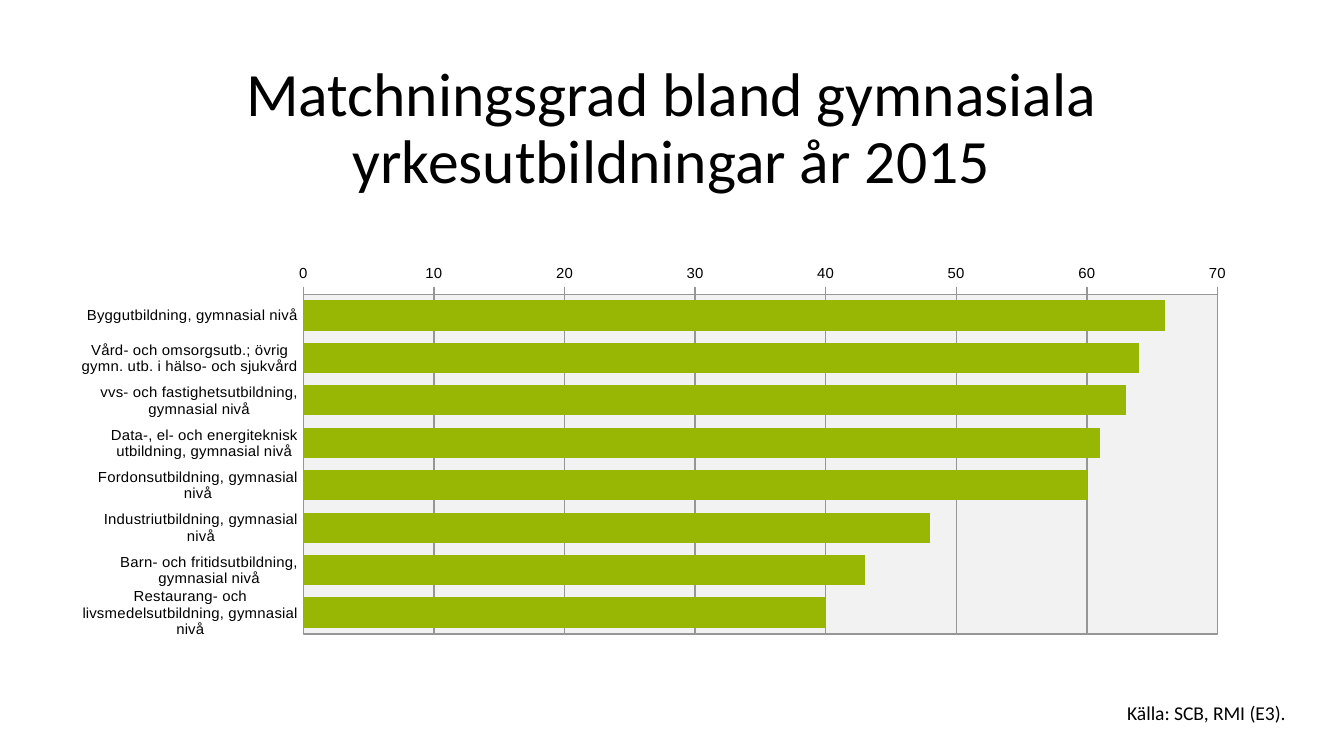
"""Build the slide on matching rates among upper secondary vocational programmes."""
from lxml.etree import SubElement
from pptx import Presentation
from pptx.chart.data import CategoryChartData
from pptx.dml.color import RGBColor
from pptx.enum.chart import XL_AXIS_CROSSES, XL_CHART_TYPE, XL_TICK_MARK
from pptx.enum.text import MSO_ANCHOR, MSO_AUTO_SIZE, PP_ALIGN
from pptx.oxml.ns import qn
from pptx.util import Pt

BLACK = RGBColor(0x00, 0x00, 0x00)
GREEN = RGBColor(0x98, 0xB6, 0x04)
GRAY = RGBColor(0x96, 0x96, 0x96)
PALE = RGBColor(0xF2, 0xF2, 0xF2)
PX_PER_INCH = 134.4


def px(*lengths):
    return [round(length * 914400 / PX_PER_INCH) for length in lengths]


def style_font(font, name, size):
    font.name = name
    font.size = Pt(size)
    font.color.rgb = BLACK


MATCHING = {
    "Byggutbildning, gymnasial nivå": 66,
    "Vård- och omsorgsutb.; övrig gymn. utb. i hälso- och sjukvård": 64,
    "vvs- och fastighetsutbildning, gymnasial nivå": 63,
    "Data-, el- och energiteknisk utbildning, gymnasial nivå": 61,
    "Fordonsutbildning, gymnasial nivå": 60,
    "Industriutbildning, gymnasial nivå": 48,
    "Barn- och fritidsutbildning, gymnasial nivå": 43,
    "Restaurang- och livsmedelsutbildning, gymnasial nivå": 40,
}

deck = Presentation()
deck.slide_width, deck.slide_height = px(1344, 756)
slide = deck.slides.add_slide(deck.slide_layouts[5])

heading = slide.shapes.title
heading.left, heading.top, heading.width, heading.height = px(78, 54, 1187, 152)
heading_text = heading.text_frame
heading_text.text = "Matchningsgrad bland gymnasiala yrkesutbildningar år 2015"
heading_text.margin_left = heading_text.margin_right = 0
heading_text.margin_top = heading_text.margin_bottom = 0
heading_text.vertical_anchor = MSO_ANCHOR.MIDDLE
heading_text.auto_size = MSO_AUTO_SIZE.NONE
heading_text.word_wrap = True
heading_line = heading_text.paragraphs[0]
heading_line.alignment = PP_ALIGN.CENTER
heading_line.line_spacing = 0.9
style_font(heading_line.font, "Calibri", 33)

matching_data = CategoryChartData()
matching_data.categories = list(MATCHING)
matching_data.add_series("Series 1", list(MATCHING.values()))
matching = slide.shapes.add_chart(
    XL_CHART_TYPE.BAR_CLUSTERED, *px(78, 265, 1187, 396), matching_data
).chart
matching.has_legend = False
matching.has_title = False
style_font(matching.font, "Arial", 8)

bars = matching.plots[0]
bars.gap_width = 40
bars.vary_by_categories = False
bars.series[0].format.fill.solid()
bars.series[0].format.fill.fore_color.rgb = GREEN

programmes = matching.category_axis
programmes.reverse_order = True
programmes.crosses = XL_AXIS_CROSSES.MAXIMUM
programmes.major_tick_mark = XL_TICK_MARK.NONE

percent = matching.value_axis
percent.minimum_scale = 0
percent.maximum_scale = 70
percent.major_unit = 10
percent.major_tick_mark = XL_TICK_MARK.OUTSIDE
percent.tick_labels.number_format = "#,##0"
percent.tick_labels.number_format_is_linked = False
percent.has_major_gridlines = True

for rule in (programmes.format.line, percent.format.line, percent.major_gridlines.format.line):
    rule.color.rgb = GRAY
    rule.width = Pt(0.75)

plot_area = bars.series[0].format.fill and matching.element.find(".//" + qn("c:plotArea"))
for old_layout in plot_area.findall(qn("c:layout")):
    plot_area.remove(old_layout)
layout = SubElement(plot_area, qn("c:layout"))
plot_area.insert(0, layout)
frame = SubElement(layout, qn("c:manualLayout"))
for tag, value in (
    ("layoutTarget", "inner"), ("xMode", "edge"), ("yMode", "edge"),
    ("x", "0.19"), ("y", "0.05"), ("w", "0.77"), ("h", "0.88"),
):
    SubElement(frame, qn(f"c:{tag}")).set("val", value)

backdrop = SubElement(plot_area, qn("c:spPr"))
outline = SubElement(backdrop, qn("a:ln"), w=str(Pt(0.75)))
for parent, color in ((backdrop, PALE), (outline, GRAY)):
    fill = SubElement(parent, qn("a:solidFill"))
    SubElement(fill, qn("a:srgbClr"), val=str(color))
backdrop.append(outline)

credit = slide.shapes.add_textbox(*px(1114, 694, 188, 38)).text_frame
credit.word_wrap = False
credit.auto_size = MSO_AUTO_SIZE.SHAPE_TO_FIT_TEXT
credit.text = "Källa: SCB, RMI (E3)."
style_font(credit.paragraphs[0].font, "Calibri", 10.5)

deck.save("out.pptx")
